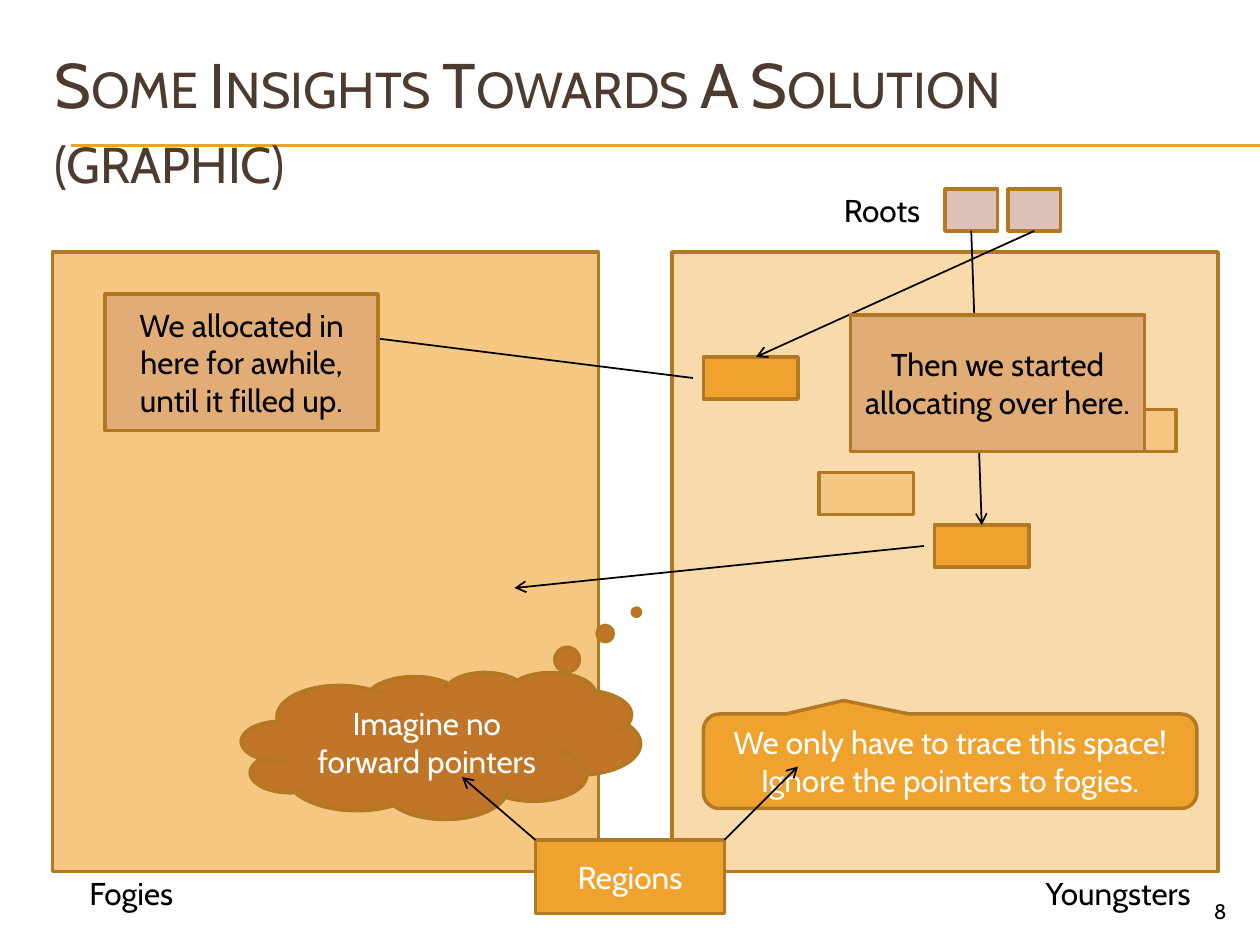
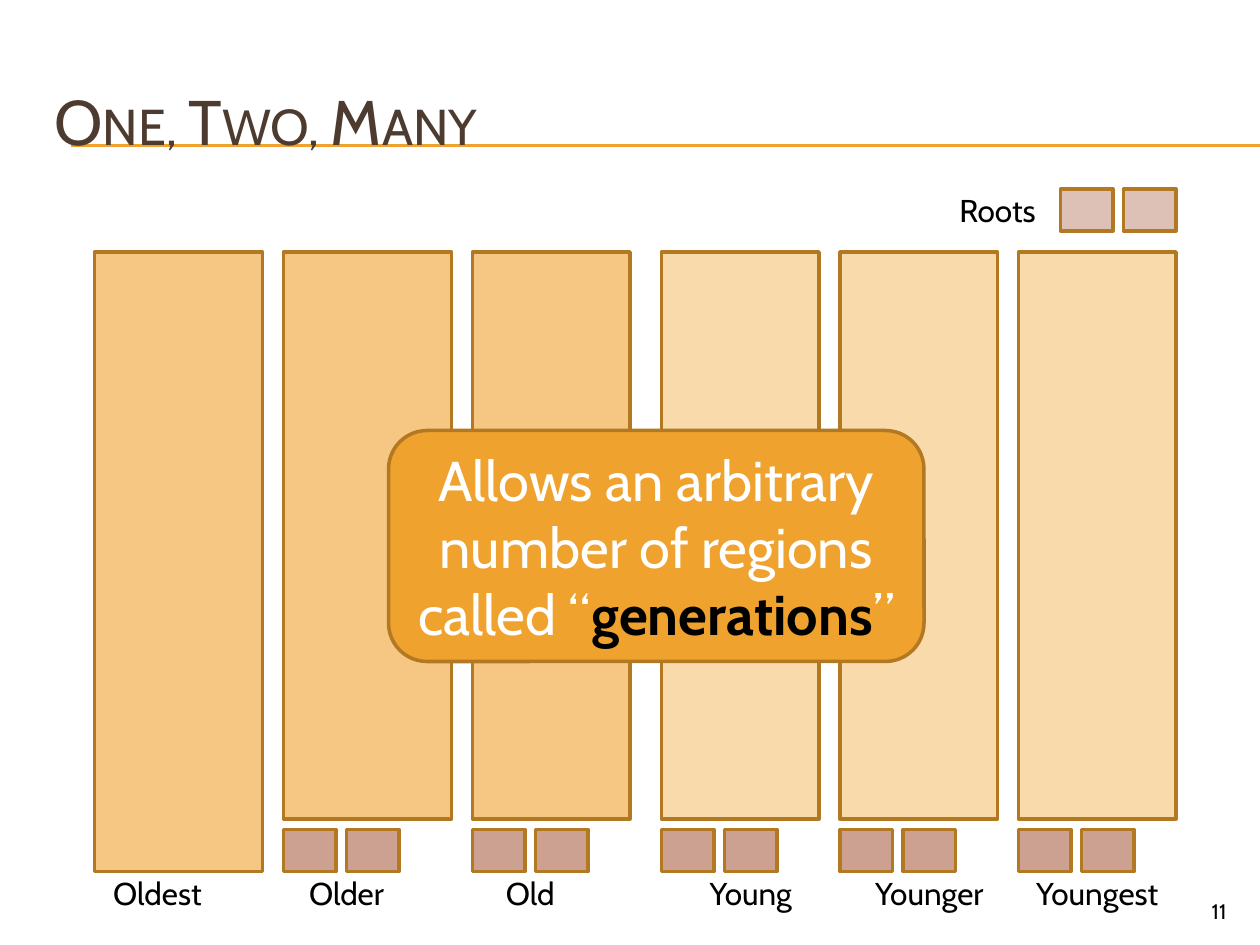
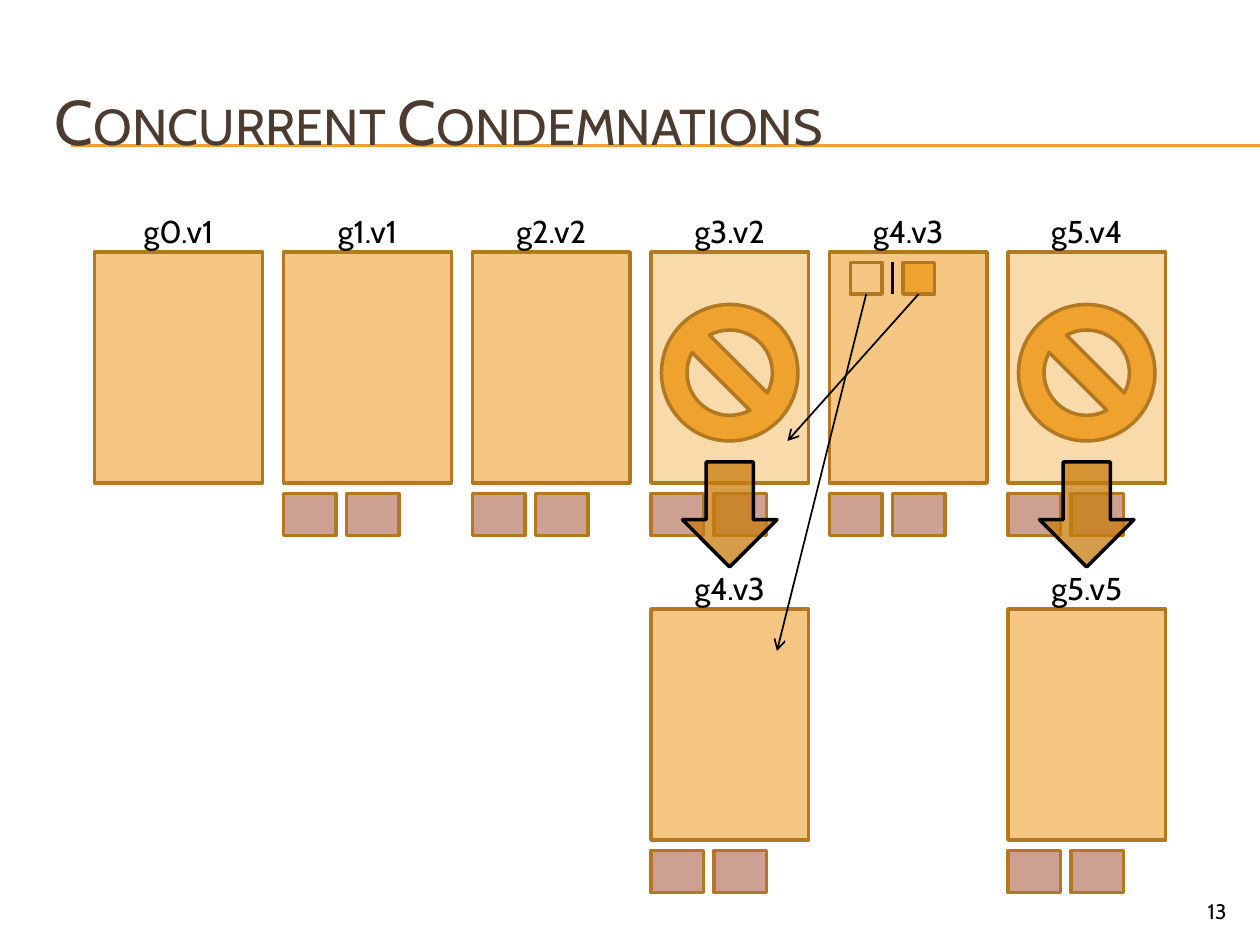
from dataclasses import dataclass
from typing import NamedTuple, Optional

from lxml.etree import SubElement
from pptx import Presentation
from pptx.dml.color import RGBColor
from pptx.enum.shapes import MSO_CONNECTOR, MSO_SHAPE
from pptx.enum.text import MSO_ANCHOR, PP_ALIGN
from pptx.oxml.ns import qn
from pptx.shapes.autoshape import Shape
from pptx.shapes.connector import Connector
from pptx.slide import Slide
from pptx.util import Cm, Length, Pt

FONT = "Cabin"
BLACK = RGBColor(0x00, 0x00, 0x00)
WHITE = RGBColor(0xFF, 0xFF, 0xFF)
TITLE_BROWN = RGBColor(0x4E, 0x3B, 0x30)
BORDER = RGBColor(0xB2, 0x78, 0x22)
ORANGE = RGBColor(0xF0, 0xA2, 0x2E)
OLD_SPACE = RGBColor(0xF6, 0xC7, 0x82)
YOUNG_SPACE = RGBColor(0xF9, 0xDA, 0xAB)
ROOT_PINK = RGBColor(0xDD, 0xC0, 0xB6)
REMEMBERED_PINK = RGBColor(0xCC, 0xA1, 0x92)
NOTE_TAN = RGBColor(0xE2, 0xAC, 0x76)
CLOUD_BROWN = RGBColor(0xC1, 0x75, 0x29)
ARROW_BROWN = RGBColor(0xC8, 0x7D, 0x0E)

# Every position is in grid units, twelve to the inch
UNITS_PER_INCH = 12
REGION_TOP = 24
LABEL_HEIGHT = 4
SLOT_WIDTH, SLOT_HEIGHT, SLOT_PITCH = 5, 4, 6


class Point(NamedTuple):
    x: float
    y: float


class Box(NamedTuple):
    left: float
    top: float
    width: float
    height: float


@dataclass(frozen=True)
class Generation:
    name: str
    left: float
    width: float
    fill: RGBColor = OLD_SPACE
    remembered: bool = True


@dataclass(frozen=True)
class Label:
    text: str
    left: float
    width: float


def grid(units: float) -> Length:
    return Cm(units * 2.54 / UNITS_PER_INCH)


# Shared drawing functions
def write(shape: Shape, text: str, color: RGBColor, size: float = 18,
          align: PP_ALIGN = PP_ALIGN.CENTER,
          anchor: MSO_ANCHOR = MSO_ANCHOR.MIDDLE) -> None:
    frame = shape.text_frame
    frame.word_wrap = True
    frame.vertical_anchor = anchor
    frame.text = text
    for paragraph in frame.paragraphs:
        paragraph.alignment = align
        paragraph.font.name = FONT
        paragraph.font.size = Pt(size)
        paragraph.font.color.rgb = color


def draw_shape(slide: Slide, box: Box, fill: RGBColor, text: str = "",
               color: RGBColor = WHITE, kind: MSO_SHAPE = MSO_SHAPE.RECTANGLE,
               border: RGBColor = BORDER,
               adjustments: tuple[float, ...] = ()) -> Shape:
    shape = slide.shapes.add_shape(kind, *map(grid, box))
    shape.shadow.inherit = False
    shape.fill.solid()
    shape.fill.fore_color.rgb = fill
    shape.line.color.rgb = border
    shape.line.width = Pt(2)
    for index, value in enumerate(adjustments):
        shape.adjustments[index] = value
    if text:
        write(shape, text, color)
    return shape


def draw_label(slide: Slide, box: Box, text: str) -> None:
    label = slide.shapes.add_textbox(*map(grid, box))
    label.text_frame.margin_left = label.text_frame.margin_right = 0
    write(label, text, BLACK)


def draw_line(slide: Slide, start: Point, end: Point, color: RGBColor = BLACK,
              width: float = 1) -> Connector:
    line = slide.shapes.add_connector(
        MSO_CONNECTOR.STRAIGHT, *map(grid, (*start, *end)))
    line.line.color.rgb = color
    line.line.width = Pt(width)
    SubElement(line.element.spPr, qn("a:effectLst"))
    return line


def draw_arrow(slide: Slide, start: Point, end: Point,
               source: Optional[Shape] = None,
               target: Optional[Shape] = None) -> None:
    arrow = draw_line(slide, start, end)
    SubElement(arrow.element.spPr.find(qn("a:ln")), qn("a:tailEnd"), type="arrow")
    if source:
        arrow.begin_connect(source, 2)
    if target:
        arrow.end_connect(target, 0)


def draw_slots(slide: Slide, left: float, top: float, fill: RGBColor) -> list[Shape]:
    return [draw_shape(slide, Box(left + i * SLOT_PITCH, top, SLOT_WIDTH, SLOT_HEIGHT), fill)
            for i in range(2)]


def draw_roots(slide: Slide, left: float) -> list[Shape]:
    draw_label(slide, Box(left - 11, 18, 10, LABEL_HEIGHT), "Roots")
    return draw_slots(slide, left, 18, ROOT_PINK)


def draw_generation(slide: Slide, generation: Generation, top: float, height: float) -> None:
    draw_shape(slide, Box(generation.left, top, generation.width, height), generation.fill)
    if generation.remembered:
        draw_slots(slide, generation.left, top + height + 1, REMEMBERED_PINK)


def add_titled_slide(deck: Presentation, title: str, number: int) -> Slide:
    slide = deck.slides.add_slide(deck.slide_layouts[5])
    heading = slide.shapes.title
    heading.left, heading.top, heading.width, heading.height = map(grid, (4, 6, 114, 11))
    write(heading, title, TITLE_BROWN, 36, PP_ALIGN.LEFT)
    for run in heading.element.iter(qn("a:r")):
        run.get_or_add_rPr().set("cap", "small")
    # Double rule behind the title
    for y in (13.8, 13.92):
        rule = draw_line(slide, Point(6.75, y), Point(120, y), ORANGE, 0.75)
        heading.element.addprevious(rule.element)
    page_number = slide.shapes.add_textbox(*map(grid, (108, 85, 10, 3.25)))
    write(page_number, str(number), BLACK, 12, PP_ALIGN.RIGHT, MSO_ANCHOR.TOP)
    return slide


# Slides
def build_insights(deck: Presentation) -> None:
    slide = add_titled_slide(deck, "Some Insights Towards A Solution (graphic)", 8)
    for left, fill in ((5, OLD_SPACE), (64, YOUNG_SPACE)):
        draw_shape(slide, Box(left, REGION_TOP, 52, 59), fill)
    draw_label(slide, Box(97, 83, 19, LABEL_HEIGHT), "Youngsters")
    draw_label(slide, Box(5, 83, 15, LABEL_HEIGHT), "Fogies")

    # Heap objects, roots and pointers
    heap_objects = [
        draw_shape(slide, Box(left, top, 9, 4), fill)
        for left, top, fill in ((67, 34, ORANGE), (103, 39, OLD_SPACE),
                                (78, 45, OLD_SPACE), (89, 50, ORANGE))]
    first_root, second_root = draw_roots(slide, 90)
    draw_arrow(slide, Point(92.5, 22), Point(93.5, 50), first_root, heap_objects[-1])
    draw_arrow(slide, Point(98.5, 22), Point(72, 34), second_root)
    draw_arrow(slide, Point(88, 52), Point(49, 56))
    draw_arrow(slide, Point(66, 36), Point(26, 31))

    # Remarks
    draw_shape(slide, Box(23, 64, 38, 14), CLOUD_BROWN, "Imagine no forward pointers",
               kind=MSO_SHAPE.CLOUD_CALLOUT, adjustments=(0.49, -0.907))
    draw_shape(slide, Box(67, 68, 47, 9), ORANGE,
               "We only have to trace this space!\vIgnore the pointers to fogies.",
               kind=MSO_SHAPE.ROUNDED_RECTANGULAR_CALLOUT,
               adjustments=(-0.216, -0.643, 0.167))
    draw_shape(slide, Box(10, 28, 26, 13), NOTE_TAN,
               "We allocated in here for awhile,\nuntil it filled up.", BLACK)
    draw_shape(slide, Box(81, 30, 28, 13), NOTE_TAN,
               "Then we started allocating over here.", BLACK)
    draw_shape(slide, Box(51, 80, 18, 7), ORANGE, "Regions")
    draw_arrow(slide, Point(51, 80), Point(44, 74))
    draw_arrow(slide, Point(69, 80), Point(76, 73))


def build_many(deck: Presentation) -> None:
    slide = add_titled_slide(deck, "One, Two, Many", 11)
    columns = (
        (Generation("Oldest", 9, 16, remembered=False), Label("Oldest", 9, 12)),
        (Generation("Older", 27, 16), Label("Older", 28, 10)),
        (Generation("Old", 45, 15), Label("Old", 47, 7)),
        (Generation("Young", 63, 15, YOUNG_SPACE), Label("Young", 64, 15)),
        (Generation("Younger", 80, 15, YOUNG_SPACE), Label("Younger", 81, 15)),
        (Generation("Youngest", 97, 15, YOUNG_SPACE), Label("Youngest", 97, 15)),
    )
    for generation, label in columns:
        draw_generation(slide, generation, REGION_TOP, 54 if generation.remembered else 59)
        draw_label(slide, Box(label.left, 83, label.width, LABEL_HEIGHT), label.text)
    draw_roots(slide, 101)

    # Central message
    message = draw_shape(slide, Box(37, 41, 51, 22), ORANGE, kind=MSO_SHAPE.ROUNDED_RECTANGLE)
    write(message, "", WHITE, 32)
    for text, color, bold in (("Allows an arbitrary number of regions called “", WHITE, False),
                              ("generations", BLACK, True), ("”", WHITE, False)):
        run = message.text_frame.paragraphs[0].add_run()
        run.text = text
        run.font.name = FONT
        run.font.size = Pt(32)
        run.font.bold = bold
        run.font.color.rgb = color


def build_condemnations(deck: Presentation) -> None:
    slide = add_titled_slide(deck, "Concurrent Condemnations", 13)
    height, copy_top = 22, 58
    condemned = (Generation("g3.v2", 62, 15, YOUNG_SPACE),
                 Generation("g5.v4", 96, 15, YOUNG_SPACE))
    current = (Generation("g0.v1", 9, 16, remembered=False), Generation("g1.v1", 27, 16),
               Generation("g2.v2", 45, 15), Generation("g4.v3", 79, 15))
    replacements = (Generation("g4.v3", 62, 15), Generation("g5.v5", 96, 15))

    for generations, top in ((current + condemned, REGION_TOP), (replacements, copy_top)):
        for generation in generations:
            draw_generation(slide, generation, top, height)
            draw_label(slide, Box(generation.left, top - LABEL_HEIGHT, generation.width,
                                  LABEL_HEIGHT), generation.name)

    # Condemned generations are copied downwards
    for generation in condemned:
        draw_shape(slide, Box(generation.left + 1, 29, 13, 13), ORANGE,
                   kind=MSO_SHAPE.NO_SYMBOL)
        copy_arrow = draw_shape(slide, Box(generation.left + 3, 44, 9, 10), ARROW_BROWN,
                                kind=MSO_SHAPE.DOWN_ARROW, border=BLACK)
        fill_color = copy_arrow.element.spPr.find(qn("a:solidFill")).find(qn("a:srgbClr"))
        SubElement(fill_color, qn("a:alpha"), val="75000")

    # Pointer pair inside g4.v3
    new_pointer = draw_shape(slide, Box(81, 25, 3, 3), OLD_SPACE)
    draw_line(slide, Point(85, 25), Point(85, 28), width=1.5)
    old_pointer = draw_shape(slide, Box(86, 25, 3, 3), ORANGE)
    draw_arrow(slide, Point(87.5, 28), Point(75, 42), old_pointer)
    draw_arrow(slide, Point(82.5, 28), Point(74, 62), new_pointer)


def main() -> None:
    deck = Presentation()
    deck.slide_width, deck.slide_height = Cm(25.4), Cm(19.05)
    build_insights(deck)
    build_many(deck)
    build_condemnations(deck)
    deck.save("out.pptx")


if __name__ == "__main__":
    main()
